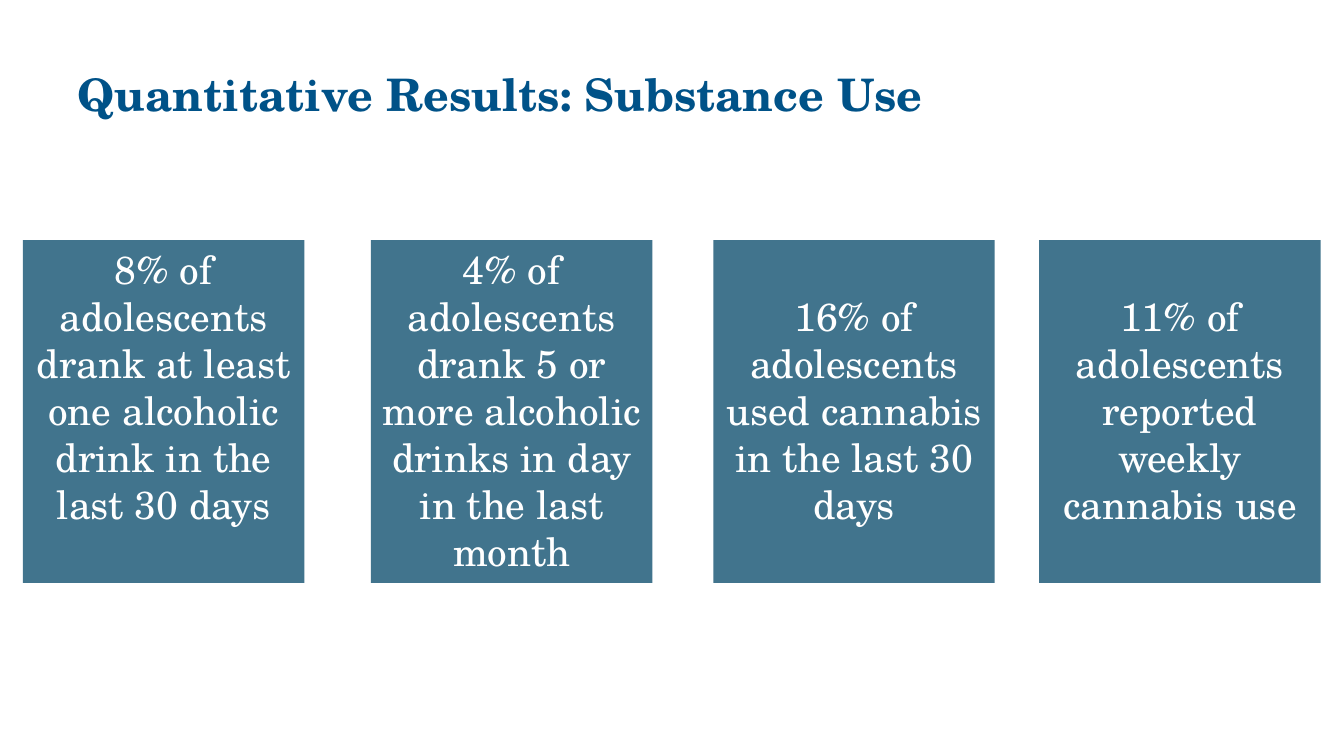
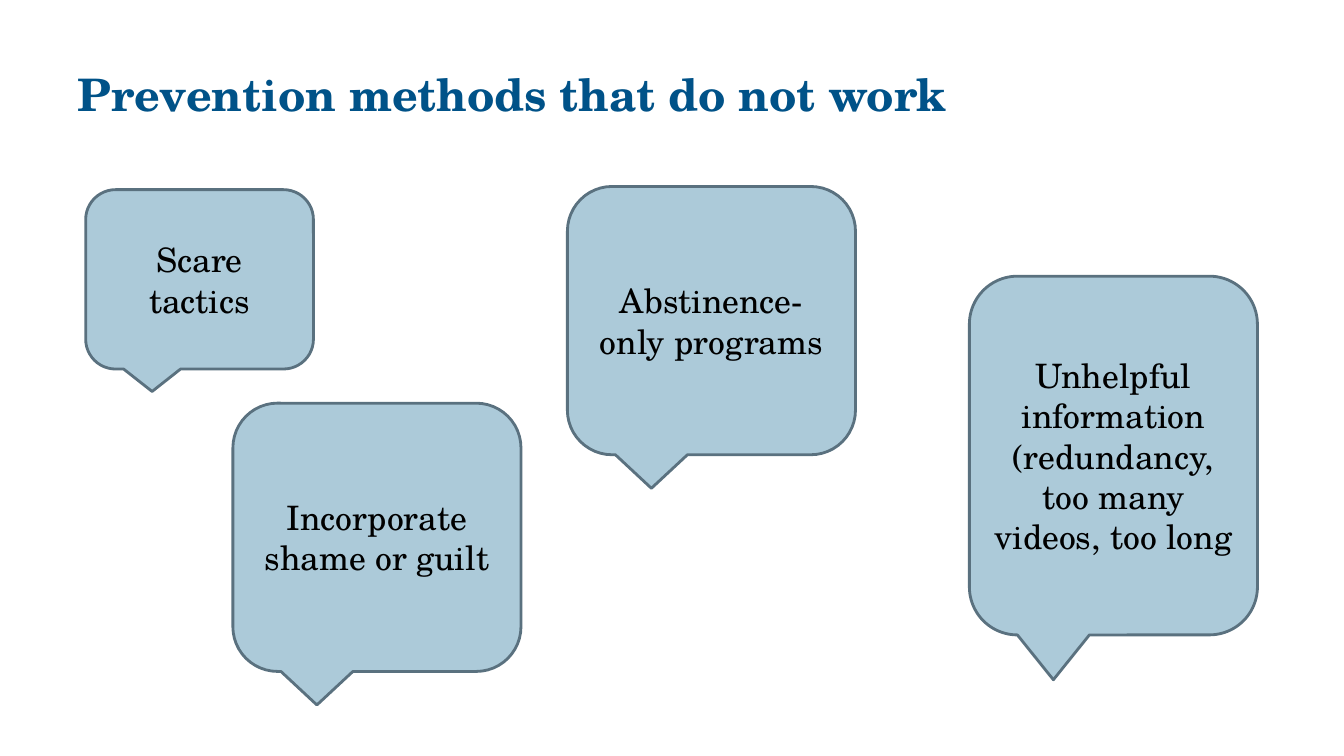
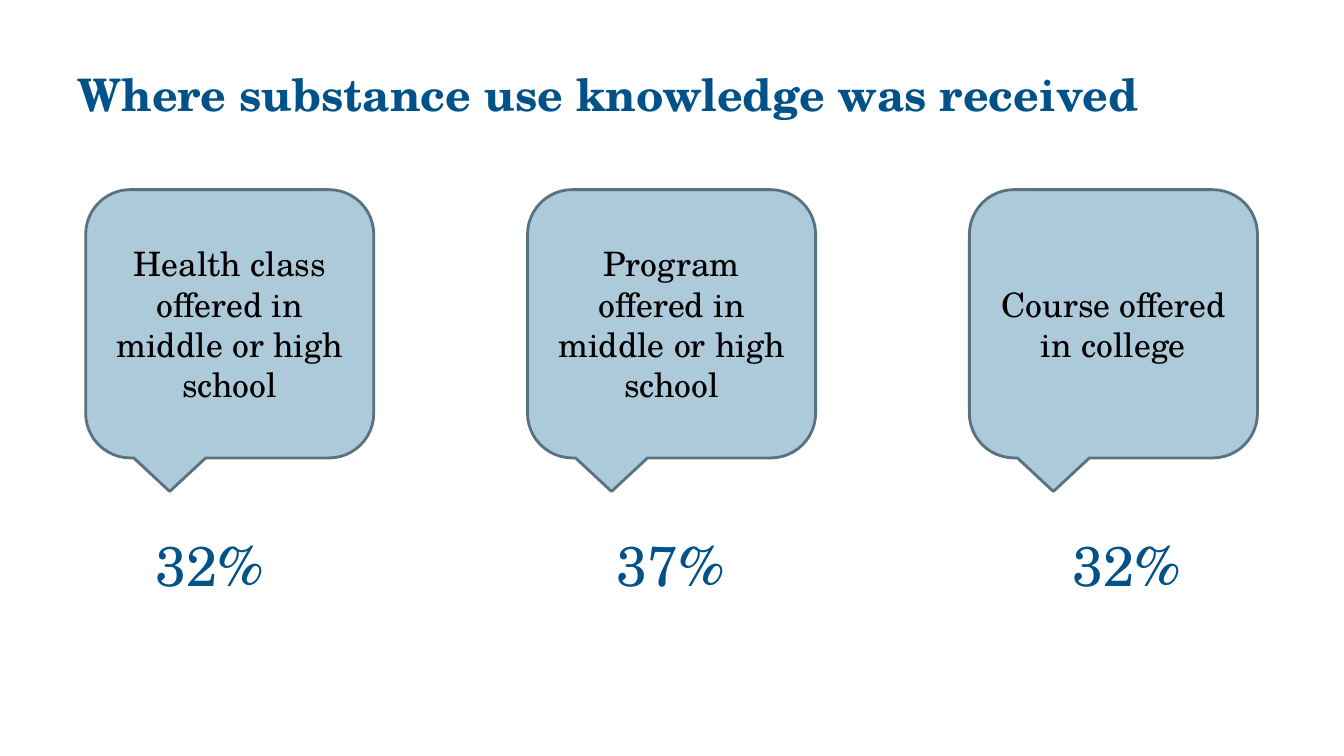
"""Build three slides on adolescent substance use and prevention."""
from collections import namedtuple

from pptx import Presentation
from pptx.dml.color import RGBColor
from pptx.enum.shapes import MSO_SHAPE
from pptx.enum.text import MSO_ANCHOR, PP_ALIGN
from pptx.util import Cm, Pt

NAVY = RGBColor(0x00, 0x52, 0x88)
TEAL = RGBColor(0x41, 0x74, 0x8D)
PALE = RGBColor(0xAC, 0xCA, 0xD9)
SLATE = RGBColor(0x5A, 0x71, 0x7F)
WHITE = RGBColor(0xFF, 0xFF, 0xFF)
BLACK = RGBColor(0x00, 0x00, 0x00)

FONT = "TeX Gyre Schola"
TITLE = {"size": Pt(32), "bold": True, "color": NAVY}
PANEL = {"size": Pt(28), "color": WHITE}
BUBBLE = {"size": Pt(24), "color": BLACK}
FIGURE = {"size": Pt(40), "color": NAVY}

Box = namedtuple("Box", "left top width height")

TITLE_BOX = Box(1.7, 0.76, 30.48, 3.18)
PANEL_ROW = Box(0.58, 6.05, 32.69, 8.64)
BUBBLE_AREA = Box(2.16, 4.7, 29.53, 12.22)
SOURCE_ROW = Box(2.16, 4.78, 29.53, 10.41)
BUBBLE_WIDTH, BUBBLE_HEIGHT = 7.26, 6.76

PANELS = [
    (0, 0.13, "8% of adolescents drank at least one alcoholic drink in the last 30 days"),
    (8.77, 0.13, "4% of adolescents drank 5 or more alcoholic drinks in day in the last month"),
    (17.4, 1.31, "16% of adolescents used cannabis in the last 30 days"),
    (25.61, 1.31, "11% of adolescents reported weekly cannabis use"),
]
METHODS = [
    (Box(3.71, 5.46, BUBBLE_WIDTH, BUBBLE_HEIGHT), "Incorporate shame or guilt"),
    (Box(0, 0.08, 5.74, 4.52), "Scare tactics"),
    (Box(12.14, 0, BUBBLE_WIDTH, BUBBLE_HEIGHT), "Abstinence-only programs"),
    (Box(22.27, 2.26, BUBBLE_WIDTH, 9.04),
     "Unhelpful information (redundancy, too many videos, too long"),
]
SOURCES = [
    ("Health class offered in middle or high school", "32%", 0),
    ("Program offered in middle or high school", "37%", 0.48),
    ("Course offered in college", "32%", 0.84),
]


def lengths(box):
    """Return the four sides of a box as lengths."""
    return [Cm(value) for value in box]


def write(shape, text, style, align=PP_ALIGN.CENTER, anchor=MSO_ANCHOR.MIDDLE, inset=0.13):
    """Put one styled paragraph into a shape."""
    frame = shape.text_frame
    settings = {"word_wrap": True, "vertical_anchor": anchor, "margin_top": Cm(inset)}
    for name, value in settings.items():
        setattr(frame, name, value)
    para = frame.paragraphs[0]
    para.alignment = align
    span = para.add_run()
    span.text = text
    span.font.name = FONT
    for name, value in style.items():
        if name == "color":
            span.font.color.rgb = value
        else:
            setattr(span.font, name, value)


def add_block(page, kind, box, fill, line=None):
    """Add a filled preset shape, outlined when a line colour is given."""
    shape = page.shapes.add_shape(kind, *lengths(box))
    shape.shadow.inherit = False
    shape.fill.solid()
    shape.fill.fore_color.rgb = fill
    if line is None:
        shape.line.fill.background()
    else:
        shape.line.color.rgb = line
        shape.line.width = Pt(2)
    return shape


def add_bubble(page, box, text):
    """Add a speech bubble with centred text."""
    shape = add_block(page, MSO_SHAPE.ROUNDED_RECTANGULAR_CALLOUT, box, PALE, SLATE)
    write(shape, text, BUBBLE)


def add_page(deck, title):
    """Add a blank slide with the shared title."""
    page = deck.slides.add_slide(deck.slide_layouts[6])
    shape = page.shapes.add_textbox(*lengths(TITLE_BOX))
    write(shape, title, TITLE, PP_ALIGN.LEFT)
    return page


def add_panels(page, area):
    """Place the result panels along a row."""
    for offset, inset, text in PANELS:
        box = Box(area.left + offset, area.top, 7.09, area.height)
        shape = add_block(page, MSO_SHAPE.RECTANGLE, box, TEAL)
        write(shape, text, PANEL, anchor=MSO_ANCHOR.TOP, inset=inset)


def add_methods(page, area):
    """Scatter the method bubbles over an area."""
    for place, text in METHODS:
        box = place._replace(left=area.left + place.left, top=area.top + place.top)
        add_bubble(page, box, text)


def add_sources(page, area):
    """Place evenly spaced source bubbles, each above its percentage."""
    pitch = (area.width - BUBBLE_WIDTH) / (len(SOURCES) - 1)
    for index, (text, share, shift) in enumerate(SOURCES):
        left = area.left + index * pitch
        add_bubble(page, Box(left, area.top, BUBBLE_WIDTH, BUBBLE_HEIGHT), text)
        box = Box(left + shift, area.top + 8.45, 6.27, 1.96)
        write(page.shapes.add_textbox(*lengths(box)), share, FIGURE, anchor=MSO_ANCHOR.TOP)


def main():
    """Build and save the deck."""
    deck = Presentation()
    deck.slide_width, deck.slide_height = Cm(33.87), Cm(19.05)
    pages = [
        ("Quantitative Results: Substance Use", add_panels, PANEL_ROW),
        ("Prevention methods that do not work", add_methods, BUBBLE_AREA),
        ("Where substance use knowledge was received", add_sources, SOURCE_ROW),
    ]
    for title, fill_page, area in pages:
        fill_page(add_page(deck, title), area)
    deck.save("out.pptx")


if __name__ == "__main__":
    main()
